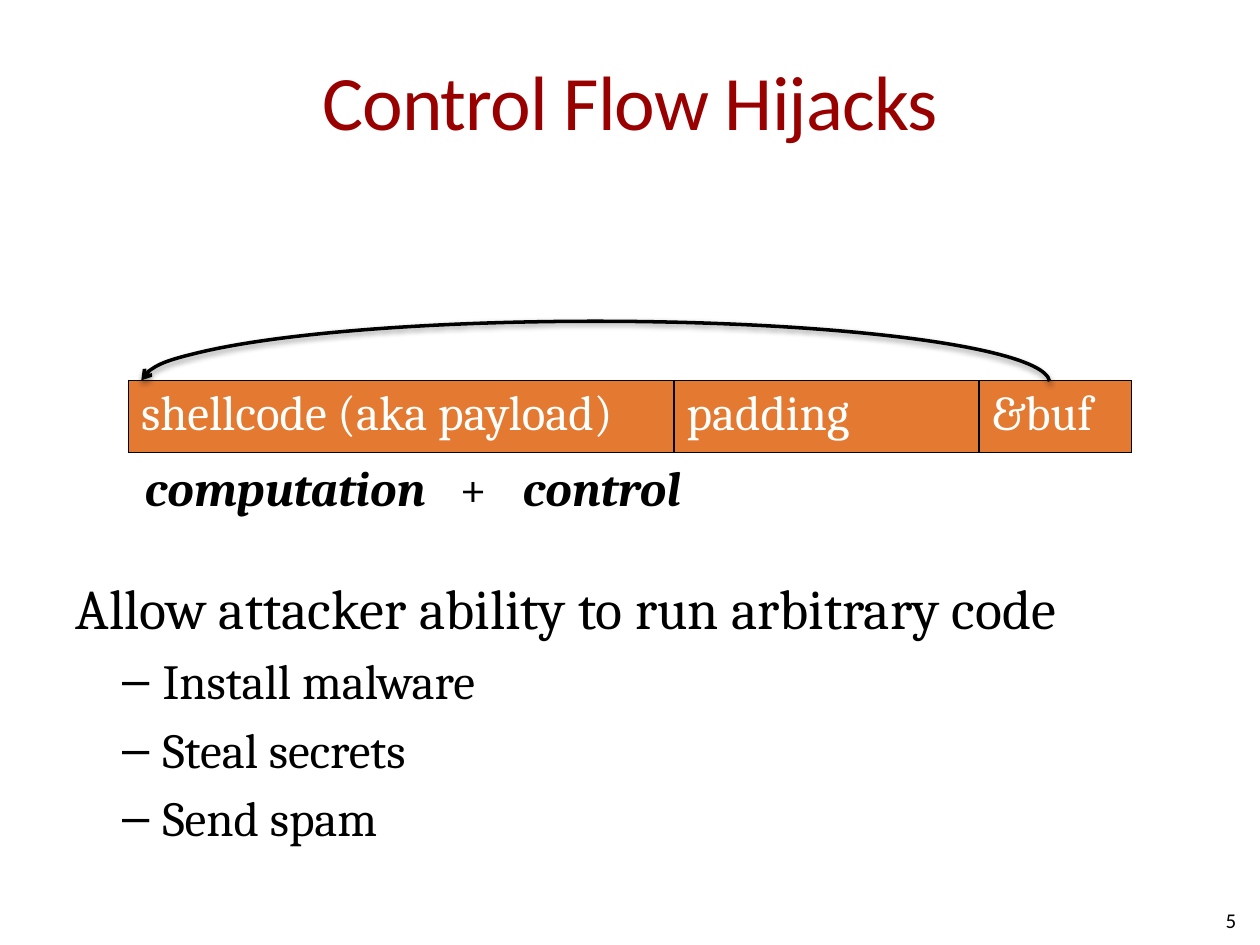
from dataclasses import dataclass

from lxml import etree
from pptx import Presentation
from pptx import util as u
from pptx.dml.color import RGBColor
from pptx.enum import shapes, text
from pptx.oxml import ns


@dataclass(frozen=True)
class Theme:
    heading_font: str = "Calibri"
    body_font: str = "Cambria"
    heading: str = "990000"
    ink: str = "000000"
    cell: str = "E47932"
    cell_ink: str = "FFFFFE"
    title_size: int = 44
    lead_size: int = 32
    body_size: int = 28
    number_size: int = 12


def add_xml(parent, tag, **attributes):
    values = {name: str(value) for name, value in attributes.items()}
    return etree.SubElement(parent, ns.qn(tag), values)


def write(paragraph, words, *, font, size, color, bold=False, italic=False,
          align=None, before=None, spacing=None):
    run = paragraph.add_run()
    run.text = words
    run.font.name = font
    run.font.size = u.Pt(size)
    run.font.color.rgb = RGBColor.from_string(color)
    run.font.bold = bold
    run.font.italic = italic
    if align is not None:
        paragraph.alignment = align
    if before is not None:
        paragraph.space_before = u.Pt(before)
    if spacing is not None:
        run.font._element.set("spc", str(spacing))


class SlideBuilder:
    def __init__(self, slide, theme):
        self.slide = slide
        self.theme = theme

    def place(self, shape, left, top, width, height):
        shape.left, shape.top = u.Inches(left), u.Inches(top)
        shape.width, shape.height = u.Inches(width), u.Inches(height)
        frame = shape.text_frame
        frame.word_wrap = True
        frame.auto_size = text.MSO_AUTO_SIZE.NONE
        return frame

    def text_box(self, *box):
        label = self.slide.shapes.add_textbox(*map(u.Inches, box))
        return self.place(label, *box)

    def title(self, words, *box):
        frame = self.place(self.slide.shapes.title, *box)
        frame.vertical_anchor = text.MSO_ANCHOR.MIDDLE
        frame.margin_left = frame.margin_right = 0
        write(frame.paragraphs[0], words, font=self.theme.heading_font,
              size=self.theme.title_size, color=self.theme.heading,
              align=text.PP_ALIGN.CENTER, spacing=-50)

    def page_number(self, number, *box):
        frame = self.text_box(*box)
        frame.vertical_anchor = text.MSO_ANCHOR.MIDDLE
        write(frame.paragraphs[0], number, font=self.theme.heading_font,
              size=self.theme.number_size, color=self.theme.ink,
              align=text.PP_ALIGN.RIGHT)

    def bullets(self, lead, points, *box):
        theme = self.theme
        frame = self.place(self.slide.placeholders[1], *box)
        opening = frame.paragraphs[0]
        write(opening, lead, font=theme.body_font, size=theme.lead_size,
              color=theme.ink, before=theme.lead_size * 0.2)
        properties = opening._p.get_or_add_pPr()
        properties.set("marL", "0")
        properties.set("indent", "0")
        add_xml(properties, "a:buNone")
        for point in points:
            item = frame.add_paragraph()
            item.level = 1
            write(item, point, font=theme.body_font, size=theme.body_size,
                  color=theme.ink, before=theme.body_size * 0.2)
            properties = item._p.get_or_add_pPr()
            properties.set("marL", str(u.Inches(0.69)))
            properties.set("indent", str(u.Inches(-0.32)))
            add_xml(properties, "a:buChar", char="–")

    def memory_row(self, fields, left, top, height):
        theme = self.theme
        width = sum(fields.values())
        table = self.slide.shapes.add_table(
            1, len(fields), *map(u.Inches, (left, top, width, height))).table
        table.first_row = table.horz_banding = False
        for index, (name, field_width) in enumerate(fields.items()):
            table.columns[index].width = u.Inches(field_width)
            cell = table.cell(0, index)
            for side in "LRTB":
                border = add_xml(cell._tc.get_or_add_tcPr(), f"a:ln{side}", w=u.Pt(1))
                add_xml(add_xml(border, "a:solidFill"), "a:srgbClr", val=theme.ink)
            cell.fill.solid()
            cell.fill.fore_color.rgb = RGBColor.from_string(theme.cell)
            write(cell.text_frame.paragraphs[0], name, font=theme.body_font,
                  size=theme.body_size, color=theme.cell_ink)

    def tabbed_line(self, parts, start, stops, *box):
        theme = self.theme
        line = self.text_box(*box).paragraphs[0]
        for words, strong in parts:
            write(line, words, font=theme.body_font, size=theme.body_size,
                  color=theme.ink, bold=strong, italic=strong,
                  align=text.PP_ALIGN.LEFT, before=theme.body_size * 0.2)
        properties = line._p.get_or_add_pPr()
        properties.set("marL", str(u.Inches(start)))
        properties.set("indent", "0")
        tabs = add_xml(properties, "a:tabLst")
        for position, align in stops:
            add_xml(tabs, "a:tab", pos=u.Inches(position), algn=align)

    def jump_arc(self, *box):
        arc = self.slide.shapes.add_shape(
            shapes.MSO_SHAPE.ARC, *map(u.Inches, box))
        arc.adjustments[0] = 0.078
        arc.adjustments[1] = 107.845
        arc.fill.background()
        arc.line.color.rgb = RGBColor.from_string(self.theme.ink)
        arc.line.width = u.Pt(2)
        properties = arc._element.spPr
        properties.find(ns.qn("a:xfrm")).set("flipV", "1")
        add_xml(properties.find(ns.qn("a:ln")), "a:tailEnd", type="arrow")
        arc.shadow.inherit = False
        shadow = add_xml(properties.find(ns.qn("a:effectLst")), "a:outerShdw",
                         blurRad=u.Pt(3.1), dist=u.Pt(1.6), dir=90 * 60000,
                         rotWithShape=0)
        tint = add_xml(shadow, "a:srgbClr", val=self.theme.ink)
        add_xml(tint, "a:alpha", val=38000)


def main():
    deck = Presentation()
    deck.slide_width, deck.slide_height = u.Inches(10), u.Inches(7.5)
    slide = deck.slides.add_slide(deck.slide_layouts[1])
    builder = SlideBuilder(slide, Theme())

    builder.title("Control Flow Hijacks", 0.5, 0.17, 9, 1.25)
    builder.page_number("5", 7.58, 7.1, 2.33, 0.4)
    builder.memory_row(
        {"shellcode (aka payload)": 4.33, "padding": 2.42, "&buf": 1.21},
        1.02, 3.02, 0.57)
    builder.jump_arc(1.12, 2.55, 7.21, 0.97)
    builder.tabbed_line(
        [("computation", True), ("\t+\t", False), ("control", True)],
        0.55, [(4.67, "ctr"), (8.26, "r")], 0.5, 3.58, 9, 0.67)
    builder.bullets(
        "Allow attacker ability to run arbitrary code",
        ["Install malware", "Steal secrets", "Send spam"], 0.5, 4.5, 9, 2.2)

    deck.save("out.pptx")


if __name__ == "__main__":
    main()
